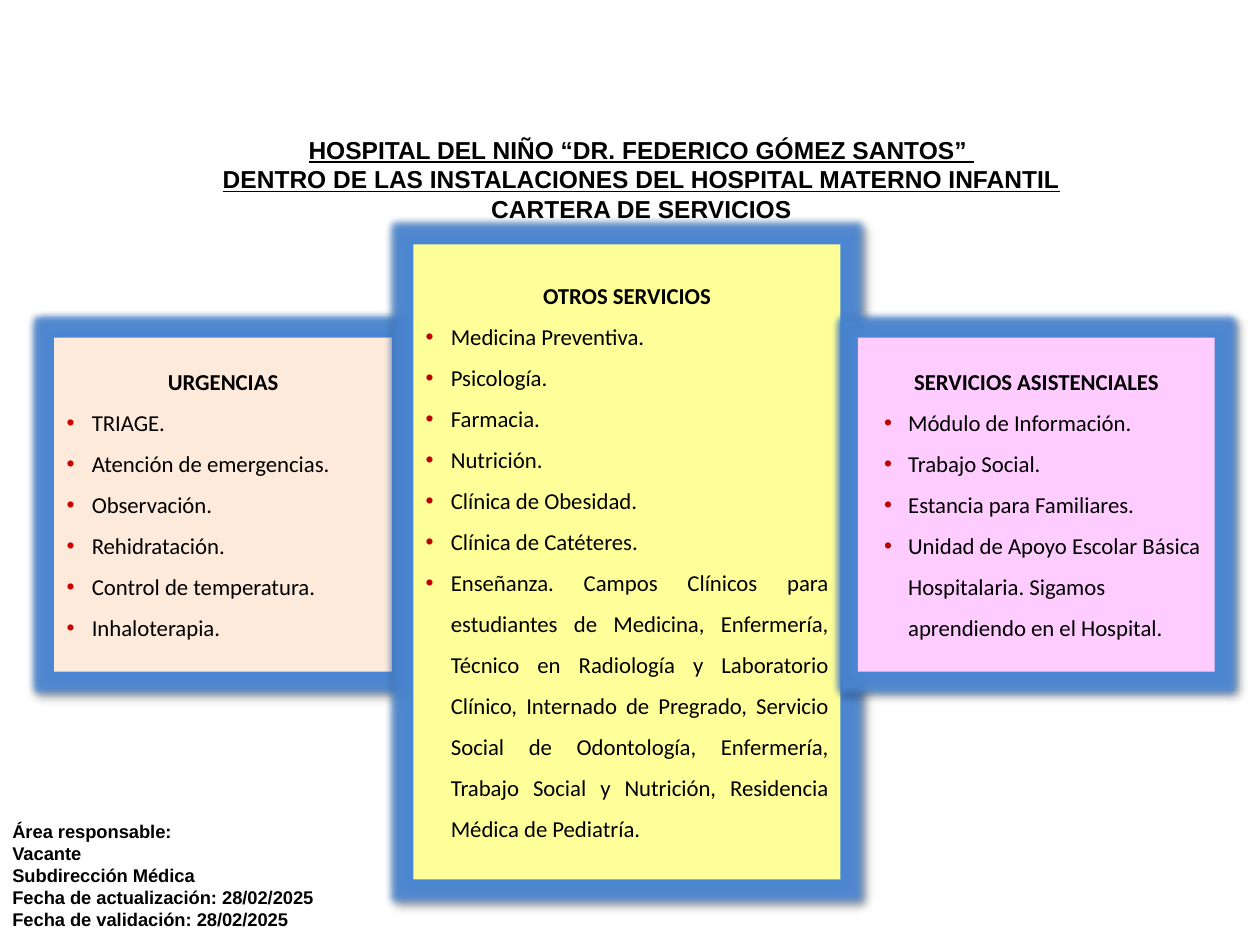
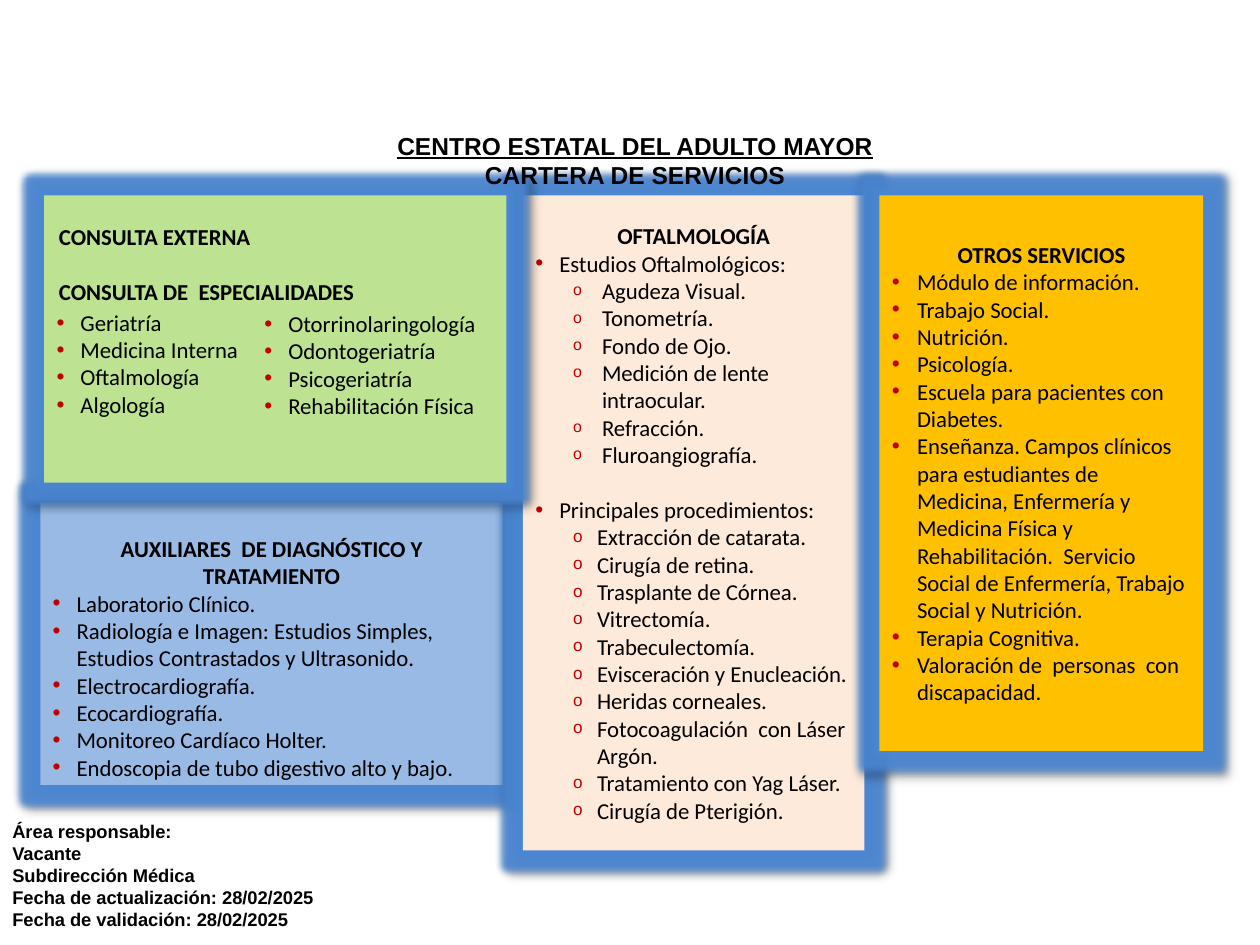
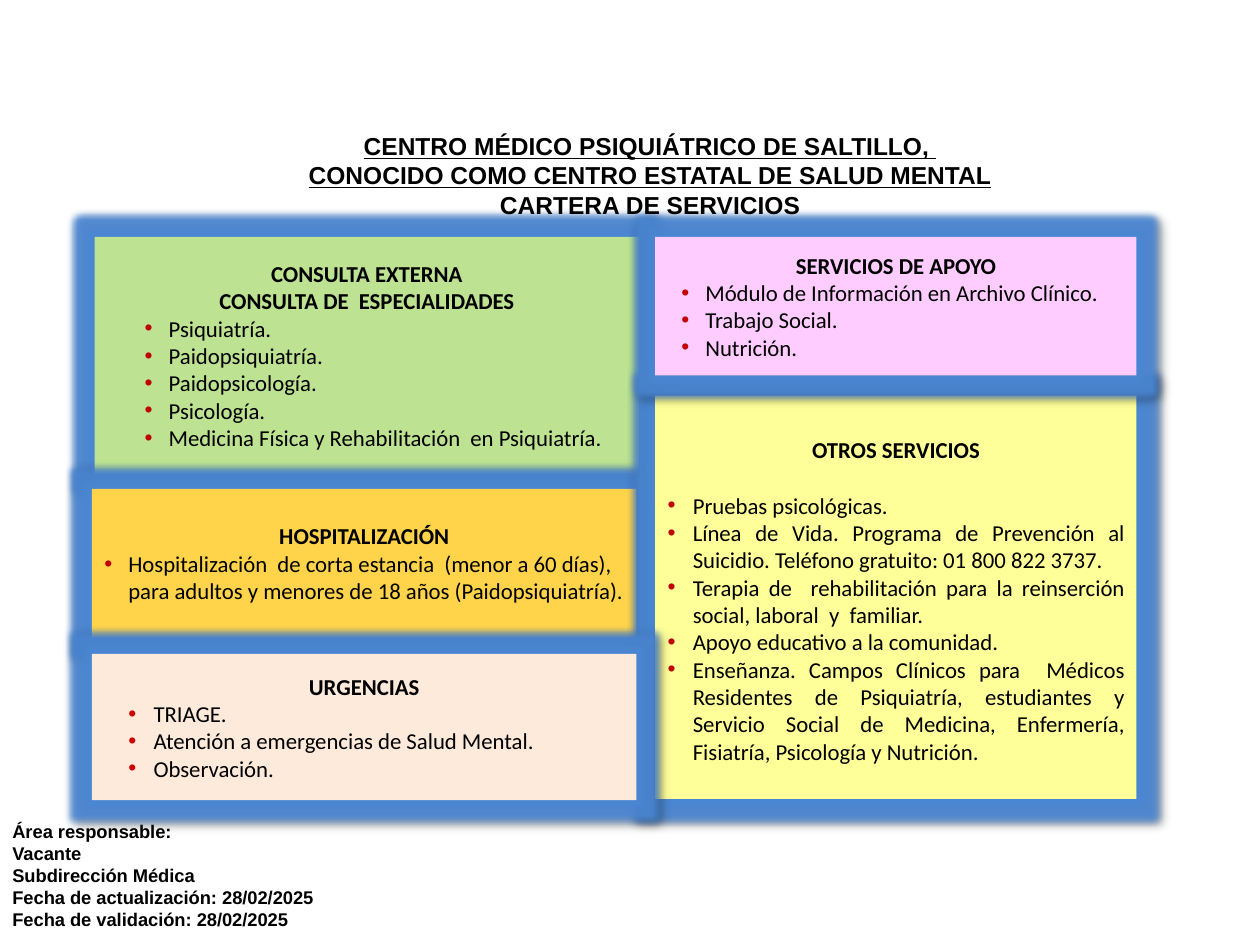
from dataclasses import dataclass

from pptx import Presentation
from pptx.dml.color import RGBColor
from pptx.enum.shapes import MSO_SHAPE as Shape
from pptx.enum.text import MSO_ANCHOR as Anchor, PP_ALIGN as Align
from pptx.oxml import parse_xml
from pptx.oxml.ns import nsdecls, qn
from pptx.util import Inches, Pt

BLACK, RED, GLOW = "000000", "C00000", "4A86D2"
GREEN, PEACH, YELLOW, PINK = "BCE292", "FDEADA", "FFFF99", "FFCCFF"
BLUE, ORANGE, GOLD = "C6D9F1", "FFC000", "FFD44B"
BODY_SIZE = 13
BLANK_LINE = 15.9  # points


@dataclass
class Bullets:
    items: list
    left: float = 0.19
    hang: float = 0.19
    mark: str = "•"
    mark_percent: int = 100
    color: str = RED
    spacing: float = 1.0
    justify: bool = False
    gap: float = 0


@dataclass
class Panel:
    box: tuple
    fill: str
    headings: list
    groups: list
    opacity: int = 100
    top_margin: float = 0.05


@dataclass
class Label:
    """Text laid over a panel, without fill."""
    box: tuple
    headings: list
    groups: list


FOOTER = [
    "Área responsable:",
    "Vacante",
    "Subdirección Médica",
    "Fecha de actualización: 28/02/2025",
    "Fecha de validación: 28/02/2025",
]
SUBTITLE = "CARTERA DE SERVICIOS"

CHILDREN_HOSPITAL = {
    "title_box": (1.15, 1.02, 7.88, 0.71),
    "title": [
        "HOSPITAL DEL NIÑO “DR. FEDERICO GÓMEZ SANTOS” ",
        "DENTRO DE LAS INSTALACIONES DEL HOSPITAL MATERNO INFANTIL",
    ],
    "parts": [
        Panel((0.43, 2.68, 2.68, 2.65), PEACH, ["URGENCIAS"], [Bullets([
            "TRIAGE.",
            "Atención de emergencias.",
            "Observación.",
            "Rehidratación.",
            "Control de temperatura.",
            "Inhaloterapia.",
        ], 0.2, 0.2, color="CC0000", spacing=1.5)]),
        Panel((3.28, 1.94, 3.39, 5.04), YELLOW, ["OTROS SERVICIOS"], [Bullets([
            "Medicina Preventiva.",
            "Psicología.",
            "Farmacia.",
            "Nutrición.",
            "Clínica de Obesidad.",
            "Clínica de Catéteres.",
            "Enseñanza. Campos Clínicos para estudiantes de Medicina, Enfermería, "
            "Técnico en Radiología y Laboratorio Clínico, Internado de Pregrado, "
            "Servicio Social de Odontología, Enfermería, Trabajo Social y Nutrición, "
            "Residencia Médica de Pediatría.",
        ], 0.2, 0.2, spacing=1.5, justify=True)]),
        Panel((6.81, 2.68, 2.83, 2.65), PINK, ["SERVICIOS ASISTENCIALES"], [Bullets([
            "Módulo de Información.",
            "Trabajo Social.",
            "Estancia para Familiares.",
            "Unidad de Apoyo Escolar Básica Hospitalaria. "
            "Sigamos aprendiendo en el Hospital.",
        ], 0.3, spacing=1.5)]),
    ],
}

SENIOR_CENTER = {
    "title_box": (1.14, 0.99, 7.8, 0.56),
    "title": ["CENTRO ESTATAL DEL ADULTO MAYOR"],
    "parts": [
        Panel((0.32, 3.99, 3.67, 2.24), BLUE,
              ["AUXILIARES  DE DIAGNÓSTICO Y TRATAMIENTO"], [Bullets([
                  "Laboratorio Clínico.",
                  "Radiología e Imagen: Estudios Simples, Estudios Contrastados "
                  "y Ultrasonido.",
                  "Electrocardiografía.",
                  "Ecocardiografía.",
                  "Monitoreo Cardíaco Holter.",
                  "Endoscopia de tubo digestivo alto y bajo.",
              ])], opacity=63, top_margin=0.27),
        Panel((4.15, 1.55, 2.71, 5.2), PEACH, ["OFTALMOLOGÍA"], [
            Bullets(["Estudios Oftalmológicos:"]),
            Bullets([
                "Agudeza Visual.",
                "Tonometría.",
                "Fondo de Ojo.",
                "Medición de lente intraocular.",
                "Refracción.",
                "Fluroangiografía.",
            ], 0.53, 0.23, "o", 70),
            Bullets(["Principales procedimientos:"], gap=BLANK_LINE),
            Bullets([
                "Extracción de catarata.",
                "Cirugía de retina.",
                "Trasplante de Córnea.",
                "Vitrectomía.",
                "Trabeculectomía.",
                "Evisceración y Enucleación.",
                "Heridas corneales.",
                "Fotocoagulación  con Láser Argón.",
                "Tratamiento con Yag Láser.",
                "Cirugía de Pterigión.",
            ], 0.49, 0.19, "o", 75),
        ]),
        Panel((6.98, 1.55, 2.57, 4.41), ORANGE, ["OTROS SERVICIOS"], [Bullets([
            "Módulo de información.",
            "Trabajo Social.",
            "Nutrición.",
            "Psicología.",
            "Escuela para pacientes con Diabetes.",
            "Enseñanza. Campos clínicos para estudiantes de Medicina, Enfermería y "
            "Medicina Física y Rehabilitación.  Servicio Social de Enfermería, "
            "Trabajo Social y Nutrición.",
            "Terapia Cognitiva.",
            "Valoración de  personas  con discapacidad.",
        ], 0.2, 0.2)]),
        Panel((0.35, 1.55, 3.67, 2.28), GREEN, [], []),
        Label((0.37, 1.72, 3.24, 0.72),
              ["CONSULTA EXTERNA", "CONSULTA DE  ESPECIALIDADES"], []),
        Label((0.35, 2.4, 1.75, 0.97), [], [Bullets([
            "Geriatría", "Medicina Interna", "Oftalmología", "Algología",
        ])]),
        Label((2, 2.41, 2.03, 0.97), [], [Bullets([
            "Otorrinolaringología", "Odontogeriatría", "Psicogeriatría",
            "Rehabilitación Física",
        ])]),
    ],
}

PSYCHIATRIC_CENTER = {
    "title_box": (0.83, 0.99, 8.66, 0.71),
    "title": [
        "CENTRO MÉDICO PSIQUIÁTRICO DE SALTILLO, ",
        "CONOCIDO COMO CENTRO ESTATAL DE SALUD MENTAL",
    ],
    "parts": [
        Panel((0.75, 1.88, 4.32, 1.88), GREEN,
              ["CONSULTA EXTERNA", "CONSULTA DE  ESPECIALIDADES"], [Bullets([
                  "Psiquiatría.",
                  "Paidopsiquiatría.",
                  "Paidopsicología.",
                  "Psicología.",
                  "Medicina Física y Rehabilitación  en Psiquiatría.",
              ], 0.49)]),
        Panel((0.73, 3.88, 4.32, 1.18), GOLD, ["HOSPITALIZACIÓN"], [Bullets([
            "Hospitalización  de corta estancia  (menor a 60 días), "
            "para adultos y menores de 18 años (Paidopsiquiatría).",
        ])]),
        Panel((5.2, 3.14, 3.82, 3.2), YELLOW, ["OTROS SERVICIOS"], [Bullets([
            "Pruebas psicológicas.",
            "Línea de Vida. Programa de Prevención al Suicidio. "
            "Teléfono gratuito: 01 800 822 3737.",
            "Terapia de  rehabilitación para la reinserción social, "
            "laboral  y  familiar.",
            "Apoyo educativo a la comunidad.",
            "Enseñanza. Campos Clínicos para  Médicos Residentes de Psiquiatría, "
            "estudiantes y Servicio Social de Medicina, Enfermería, Fisiatría, "
            "Psicología y Nutrición.",
        ], 0.2, 0.2, justify=True, gap=BLANK_LINE)], top_margin=0.1),
        Panel((5.2, 1.88, 3.82, 1.1), PINK, ["SERVICIOS DE APOYO"], [Bullets([
            "Módulo de Información en Archivo Clínico.",
            "Trabajo Social.",
            "Nutrición.",
        ], 0.3)]),
        Panel((0.73, 5.19, 4.32, 1.16), PEACH, ["URGENCIAS"], [Bullets([
            "TRIAGE.",
            "Atención a emergencias de Salud Mental.",
            "Observación.",
        ], 0.39, 0.2, color="CC0000")]),
    ],
}


def rgb(color):
    return RGBColor.from_string(color)


def add_xml(parent, xml):
    """Append a drawing element, given without its namespace declaration."""
    tag, rest = xml.split(" ", 1)
    parent.append(parse_xml(f"{tag} {nsdecls('a')} {rest}"))


def add_paragraph(frame, text):
    """Return a new paragraph, or the first one while the frame is empty."""
    paragraph = frame.paragraphs[0] if not frame.text else frame.add_paragraph()
    paragraph.text = text
    return paragraph


def set_font(paragraph, name, size, bold=False, underline=False):
    font = paragraph.font
    font.name, font.size, font.bold = name, Pt(size), bold
    font.underline = underline
    font.color.rgb = rgb(BLACK)


def add_textbox(slide, box):
    frame = slide.shapes.add_textbox(*map(Inches, box)).text_frame
    frame.word_wrap = True
    return frame


def add_bullets(frame, bullets):
    for index, text in enumerate(bullets.items):
        paragraph = add_paragraph(frame, text)
        paragraph.alignment = Align.JUSTIFY if bullets.justify else Align.LEFT
        paragraph.line_spacing = bullets.spacing
        if index == 0 and bullets.gap:
            paragraph.space_before = Pt(bullets.gap)
        properties = paragraph._p.get_or_add_pPr()
        properties.set("marL", str(Inches(bullets.left)))
        properties.set("indent", str(-Inches(bullets.hang)))
        add_xml(properties, f'<a:buClr ><a:srgbClr val="{bullets.color}"/></a:buClr>')
        add_xml(properties, f'<a:buSzPct val="{bullets.mark_percent * 1000}"/>')
        add_xml(properties, '<a:buFont typeface="Arial"/>')
        add_xml(properties, f'<a:buChar char="{bullets.mark}"/>')
        set_font(paragraph, "Calibri", BODY_SIZE)


def add_effects(shape):
    """Give the shape a blue glow and a soft shadow to the lower right."""
    shape.shadow.inherit = False
    effects = shape._element.spPr.find(qn("a:effectLst"))
    add_xml(effects, f'<a:glow rad="{Pt(8)}"><a:srgbClr val="{GLOW}">'
                     '<a:alpha val="92000"/></a:srgbClr></a:glow>')
    add_xml(effects, f'<a:outerShdw blurRad="{Pt(4)}" dist="{Pt(3)}" dir="2700000" '
                     f'algn="tl" rotWithShape="0"><a:srgbClr val="{BLACK}">'
                     '<a:alpha val="40000"/></a:srgbClr></a:outerShdw>')


def add_panel(slide, panel):
    shape = slide.shapes.add_shape(Shape.RECTANGLE, *map(Inches, panel.box))
    shape.fill.solid()
    shape.fill.fore_color.rgb = rgb(panel.fill)
    if panel.opacity < 100:
        color = shape._element.spPr.find(qn("a:solidFill")).find(qn("a:srgbClr"))
        add_xml(color, f'<a:alpha val="{panel.opacity * 1000}"/>')
    shape.line.fill.background()
    add_effects(shape)
    frame = shape.text_frame
    frame.word_wrap = True
    frame.vertical_anchor = Anchor.MIDDLE
    frame.margin_top = Inches(panel.top_margin)
    return frame


def add_part(slide, part):
    is_panel = isinstance(part, Panel)
    frame = add_panel(slide, part) if is_panel else add_textbox(slide, part.box)
    for index, heading in enumerate(part.headings):
        paragraph = add_paragraph(frame, heading)
        paragraph.alignment = Align.CENTER if is_panel else Align.LEFT
        if index and not is_panel:
            paragraph.space_before = Pt(BLANK_LINE)
        set_font(paragraph, "Calibri", BODY_SIZE, bold=True)
    for bullets in part.groups:
        add_bullets(frame, bullets)


def add_footer(slide):
    frame = add_textbox(slide, (0, 6.46, 3.7, 0.98))
    for line in FOOTER:
        set_font(add_paragraph(frame, line), "Arial", 10.5, bold=True)


def add_title(slide, box, lines):
    frame = add_textbox(slide, box)
    for line in [*lines, SUBTITLE]:
        paragraph = add_paragraph(frame, line)
        paragraph.alignment = Align.CENTER
        set_font(paragraph, "Arial", 14, bold=True, underline=line != SUBTITLE)


def main():
    presentation = Presentation()
    presentation.slide_width, presentation.slide_height = Inches(10), Inches(7.5)
    for content in (CHILDREN_HOSPITAL, SENIOR_CENTER, PSYCHIATRIC_CENTER):
        slide = presentation.slides.add_slide(presentation.slide_layouts[6])
        add_footer(slide)
        for part in content["parts"]:
            add_part(slide, part)
        add_title(slide, content["title_box"], content["title"])
    presentation.save("out.pptx")


if __name__ == "__main__":
    main()
